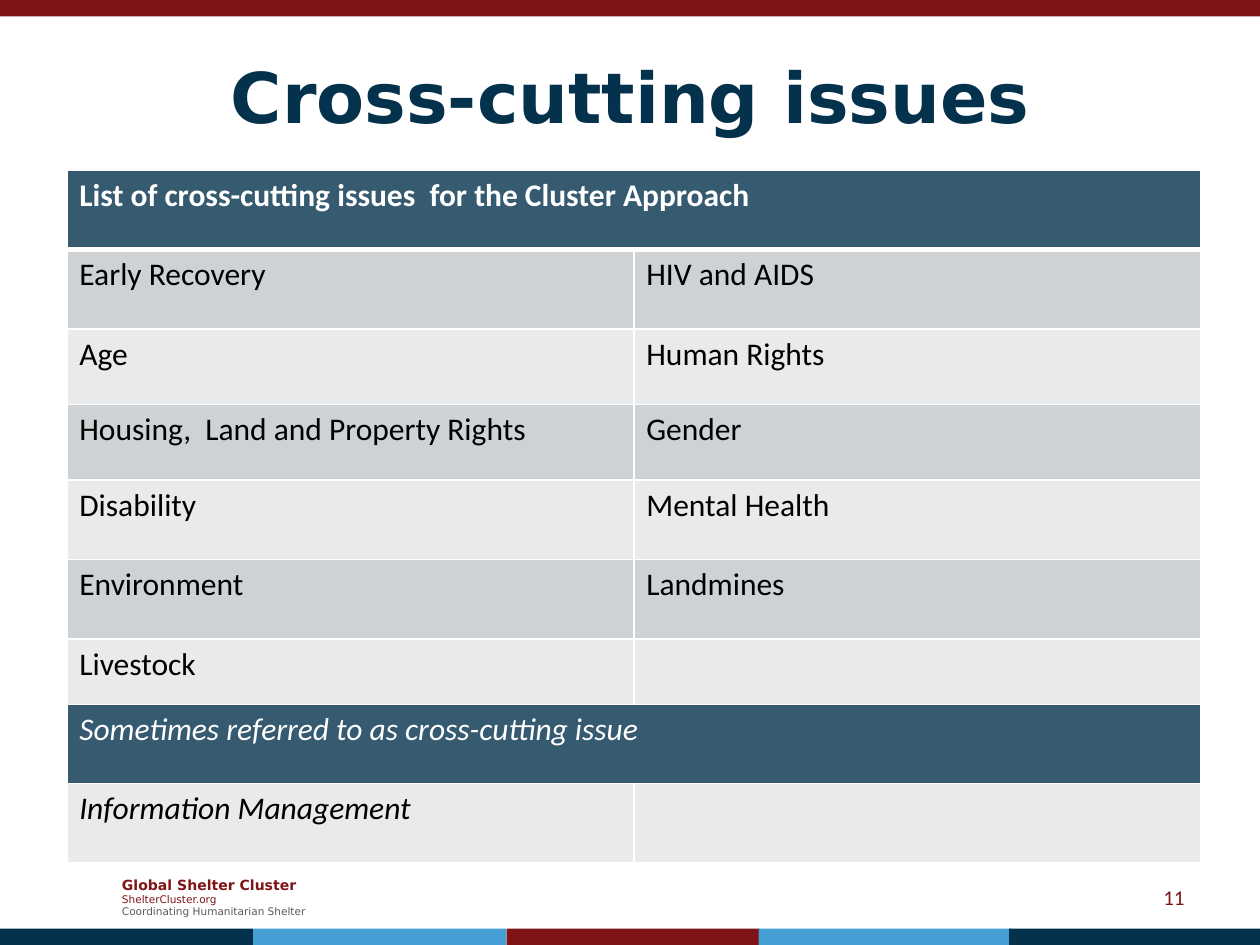
"""Build the slide listing the cross-cutting issues of the Cluster Approach."""
from lxml import etree
from pptx import Presentation
from pptx import util as u
from pptx.dml.color import RGBColor
from pptx.enum import shapes, text
from pptx.oxml.ns import qn

NAVY, BLUE, RED, SLATE = "04314C", "459FD5", "7F1416", "365A70"
WHITE, BLACK, GREY = "FFFFFF", "000000", "595959"
BANDS = ("CED2D5", "E8EAEB")

TITLE = "Cross-cutting issues"
HEADING = "List of cross-cutting issues  for the Cluster Approach"
SUBHEADING = "Sometimes referred to as cross-cutting issue"
ROWS = [
    (HEADING,),
    ("Early Recovery", "HIV and AIDS"),
    ("Age", "Human Rights"),
    ("Housing,  Land and Property Rights", "Gender"),
    ("Disability", "Mental Health"),
    ("Environment", "Landmines"),
    ("Livestock", ""),
    (SUBHEADING,),
    ("Information Management", ""),
]
ROW_HEIGHTS = [0.63, 0.63, 0.6, 0.6, 0.63, 0.63, 0.52, 0.63, 0.63]
ITALIC_FROM = ROWS.index((SUBHEADING,))
FOOTER = [
    ("Global Shelter Cluster", 8, RED, True),
    ("ShelterCluster.org", 6, RED, False),
    ("Coordinating Humanitarian Shelter", 6, GREY, False),
]
STRIPES = [(0, NAVY), (2.01, BLUE), (4.02, RED), (6.02, BLUE), (8.01, NAVY)]


def color(value):
    return RGBColor.from_string(value)


def style(para, size, name, value, bold=False, italic=False):
    for span in para.runs:
        font = span.font
        font.size, font.name = u.Pt(size), name
        font.bold, font.italic = bold, italic
        font.color.rgb = color(value)


def add_bar(page, left, top, width, value):
    bar = page.shapes.add_shape(
        shapes.MSO_SHAPE.RECTANGLE, *map(u.Inches, (left, top, width, 0.13)))
    bar.shadow.inherit = False
    bar.fill.solid()
    bar.fill.fore_color.rgb = color(value)
    bar.line.fill.background()


def add_text(page, left, top, width, height):
    box = page.shapes.add_textbox(*map(u.Inches, (left, top, width, height)))
    box.text_frame.word_wrap = True
    box.text_frame.vertical_anchor = text.MSO_ANCHOR.MIDDLE
    return box.text_frame


def set_borders(cell, top, bottom):
    properties = cell._tc.get_or_add_tcPr()
    sides = (("lnL", 1), ("lnR", 1), ("lnT", top), ("lnB", bottom))
    for position, (side, points) in enumerate(sides):
        line = etree.Element(qn(f"a:{side}"), w=str(u.Pt(points)))
        fill = etree.SubElement(line, qn("a:solidFill"))
        etree.SubElement(fill, qn("a:srgbClr"), val=WHITE)
        properties.insert(position, line)


def add_issues(page):
    frame = page.shapes.add_table(
        len(ROWS), 2, *map(u.Inches, (0.53, 1.35, 9, sum(ROW_HEIGHTS))))
    table = frame.table
    for column in table.columns:
        column.width = u.Inches(4.5)
    for index, (entries, height) in enumerate(zip(ROWS, ROW_HEIGHTS)):
        table.rows[index].height = u.Inches(height)
        banner = len(entries) == 1
        if banner:
            table.cell(index, 0).merge(table.cell(index, 1))
        for column in range(2):
            cell = table.cell(index, column)
            cell.fill.solid()
            cell.fill.fore_color.rgb = color(SLATE if banner else BANDS[(index - 1) % 2])
            set_borders(cell, 3 if index == 1 else 1, 3 if index == 0 else 1)
        for column, entry in enumerate(entries):
            if entry:
                cell = table.cell(index, column)
                cell.text_frame.text = entry
                style(cell.text_frame.paragraphs[0], 18, "Calibri",
                      WHITE if banner else BLACK,
                      bold=index == 0, italic=index >= ITALIC_FROM)


def main():
    deck = Presentation()
    deck.slide_width, deck.slide_height = u.Inches(10), u.Inches(7.5)
    page = deck.slides.add_slide(deck.slide_layouts[5])

    add_bar(page, 0, 0, 10, RED)
    for left, value in STRIPES:
        add_bar(page, left, 7.37, min(2.01, 10 - left), value)

    title = page.shapes.title
    title.left, title.top, title.width, title.height = map(u.Inches, (0.5, 0.3, 9, 0.91))
    title.text_frame.text = TITLE
    title.text_frame.vertical_anchor = text.MSO_ANCHOR.MIDDLE
    heading = title.text_frame.paragraphs[0]
    heading.alignment = text.PP_ALIGN.CENTER
    style(heading, 40, "DejaVu Sans", NAVY, bold=True)

    add_issues(page)

    footer = add_text(page, 0.87, 6.9, 1.73, 0.44)
    footer.text = "\n".join(line[0] for line in FOOTER)
    for para, (_, size, value, bold) in zip(footer.paragraphs, FOOTER):
        style(para, size, "DejaVu Sans", value, bold)

    number = add_text(page, 7.17, 6.92, 2.33, 0.4)
    number.text = "11"
    number.paragraphs[0].alignment = text.PP_ALIGN.RIGHT
    style(number.paragraphs[0], 12, "Calibri", RED)

    deck.save("out.pptx")


if __name__ == "__main__":
    main()
